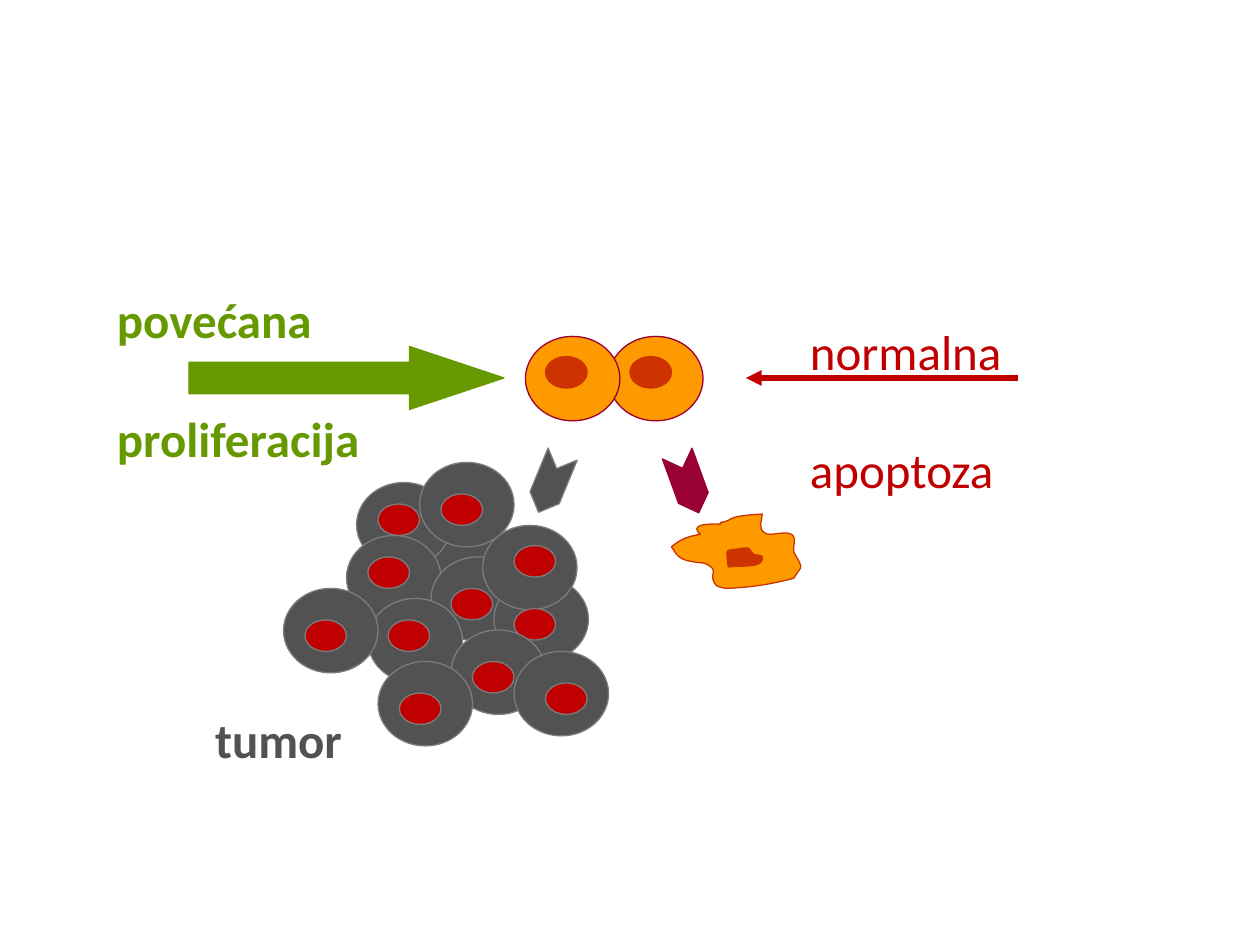
from lxml import etree
from pptx import Presentation
from pptx.dml.color import RGBColor
from pptx.enum.shapes import MSO_CONNECTOR, MSO_SHAPE
from pptx.enum.text import MSO_AUTO_SIZE, PP_ALIGN
from pptx.oxml.ns import qn
from pptx.util import Inches, Pt

ELLIPSE = MSO_SHAPE.OVAL
CHEVRON = MSO_SHAPE.CHEVRON
RIGHT_ARROW = MSO_SHAPE.RIGHT_ARROW
STRAIGHT = MSO_CONNECTOR.STRAIGHT
GROW = MSO_AUTO_SIZE.SHAPE_TO_FIT_TEXT
LEFT, CENTER = PP_ALIGN.LEFT, PP_ALIGN.CENTER

ORANGE = RGBColor(0xFF, 0x99, 0x00)
RUST = RGBColor(0xCC, 0x33, 0x00)
MAROON = RGBColor(0x99, 0x00, 0x33)
GREEN = RGBColor(0x66, 0x99, 0x00)
RED = RGBColor(0xC0, 0x00, 0x00)
DARK_GRAY = RGBColor(0x52, 0x52, 0x52)
GRAY = RGBColor(0x7C, 0x7C, 0x7C)

CELL = (0.75, 0.67)
NUCLEUS = (0.33, 0.25)
CHEVRON_SIZE = (0.5, 0.25)


def style(s, fill, line):
    s.shadow.inherit = False
    s.fill.solid()
    s.fill.fore_color.rgb = fill
    s.line.color.rgb = line
    s.line.width = Pt(0.75)


def add_styled(shapes, kind, pos, size, fill, line):
    s = shapes.add_shape(kind, *(Inches(v) for v in (*pos, *size)))
    style(s, fill, line)
    return s


prs = Presentation()
prs.slide_width, prs.slide_height = Inches(10), Inches(7.5)
slide = prs.slides.add_slide(prs.slide_layouts[6])
shapes = slide.shapes

# Dividing cell
dividing = shapes.add_group_shape().shapes
for x in (4.83, 4.17):
    add_styled(dividing, ELLIPSE, (x, 2.67), CELL, ORANGE, MAROON)
for x in (4.33, 5):
    add_styled(dividing, ELLIPSE, (x, 2.83), NUCLEUS, RUST, RUST)

# Apoptosis arrows
arrow = shapes.add_connector(STRAIGHT, Inches(8.08), Inches(3), Inches(5.92), Inches(3))
arrow.line.color.rgb = RED
arrow.line.width = Pt(3)
etree.SubElement(arrow.line._get_or_add_ln(), qn("a:tailEnd"), type="triangle")
etree.SubElement(arrow._element.spPr, qn("a:effectLst"))
s = add_styled(shapes, CHEVRON, (5.21, 3.71), CHEVRON_SIZE, MAROON, MAROON)
s.rotation = 70

# Apoptotic cell: a start point, then two controls and an end for each curve
dying_cell = [
    (5.72, 4.16),
    (5.69, 4.16), (5.53, 4.15), (5.53, 4.2), (5.53, 4.22), (5.55, 4.23), (5.56, 4.24),
    (5.45, 4.26), (5.4, 4.28), (5.33, 4.34), (5.39, 4.44), (5.41, 4.45), (5.59, 4.47),
    (5.73, 4.53), (5.61, 4.55), (5.68, 4.64), (5.69, 4.66), (5.73, 4.66), (5.76, 4.67),
    (5.98, 4.66), (6.1, 4.64), (6.3, 4.59), (6.36, 4.49), (6.37, 4.52), (6.34, 4.45),
    (6.32, 4.42), (6.3, 4.38), (6.3, 4.38), (6.29, 4.33), (6.33, 4.27), (6.28, 4.24),
    (6.23, 4.21), (6.11, 4.26), (6.07, 4.23), (6.01, 4.19), (6.05, 4.13), (6.05, 4.08),
    (6.04, 4.08), (5.86, 4.09), (5.82, 4.11), (5.8, 4.11), (5.79, 4.13), (5.78, 4.13),
    (5.71, 4.16), (5.72, 4.13), (5.72, 4.16),
]
dying_nucleus = [
    (5.9, 4.35),
    (5.75, 4.38), (5.76, 4.33), (5.78, 4.5), (5.86, 4.49), (5.94, 4.5), (6.01, 4.48),
    (6.04, 4.47), (6.06, 4.44), (6.05, 4.42), (6.04, 4.4), (6, 4.41), (5.98, 4.4),
    (5.93, 4.34), (5.96, 4.35), (5.9, 4.35),
]
for outline, fill in ((dying_cell, ORANGE), (dying_nucleus, RUST)):
    start, *points = [(Inches(x), Inches(y)) for x, y in outline]
    builder = shapes.build_freeform(*start)
    builder.add_line_segments(points, close=True)
    s = builder.convert_to_shape()
    style(s, fill, RUST)
    # Turn every three line segments into one Bezier curve
    segments = list(s._element.iter(qn("a:lnTo")))
    for i in range(0, len(segments), 3):
        curve = etree.Element(qn("a:cubicBezTo"))
        segments[i].addprevious(curve)
        for segment in segments[i:i + 3]:
            curve.append(segment[0])
            segment.getparent().remove(segment)

# Proliferation arrow
s = add_styled(shapes, RIGHT_ARROW, (1.5, 2.75), (2.5, 0.5), GREEN, GREEN)
s.adjustments[1] = 1.5

# Tumor: each layer of cells lies below its own nuclei
tumor = shapes.add_group_shape().shapes
layers = [
    ([(3.25, 4.17), (2.83, 3.83), (2.75, 4.25), (3.42, 4.42), (3.92, 4.58),
      (3.83, 4.17), (3.33, 3.67)],
     [(4.08, 4.33), (3.5, 3.92), (4.08, 4.83), (3.58, 4.67), (3, 4), (2.92, 4.42)]),
    ([(2.92, 4.75), (3.58, 5), (2.25, 4.67), (3, 5.25), (4.08, 5.17)],
     [(4.33, 5.42), (3.75, 5.25), (3.08, 4.92), (3.17, 5.5), (2.42, 4.92)]),
]
for cells, nuclei in layers:
    for pos in cells:
        add_styled(tumor, ELLIPSE, pos, CELL, DARK_GRAY, GRAY)
    for pos in nuclei:
        add_styled(tumor, ELLIPSE, pos, NUCLEUS, RED, GRAY)
s = add_styled(tumor, CHEVRON, (4.12, 3.71), CHEVRON_SIZE, DARK_GRAY, GRAY)
s.rotation = 112.5

# Labels
labels = [
    ((6.33, 2.5, 1.75, 1.04), ["normalna", "apoptoza"], RED, False, LEFT),
    ((0.83, 2.25, 2.75, 1.51), ["povećana", "proliferacija"], GREEN, True, LEFT),
    ((1.5, 5.58, 1.42, 0.58), ["tumor"], DARK_GRAY, True, CENTER),
]
for box, lines, color, bold, align in labels:
    tf = shapes.add_textbox(*(Inches(v) for v in box)).text_frame
    tf.word_wrap = True
    tf.auto_size = GROW
    for i, text in enumerate(lines):
        p = tf.add_paragraph() if i else tf.paragraphs[0]
        p.alignment = align
        p.space_before = Pt(34 if i else 0)
        r = p.add_run()
        r.text = text
        r.font.name = "Calibri"
        r.font.size = Pt(28)
        r.font.bold = bold
        r.font.color.rgb = color

prs.save("out.pptx")
